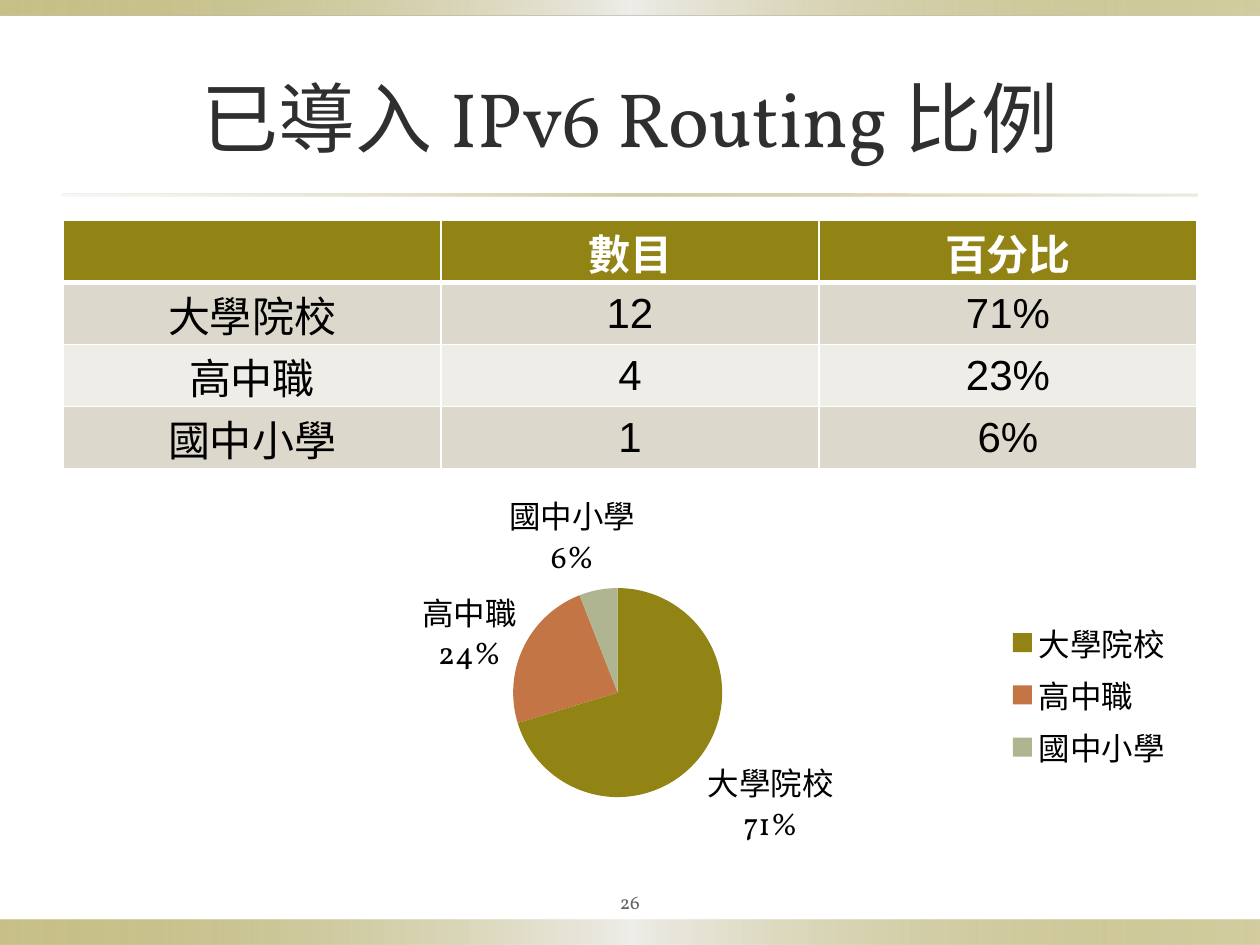
import copy

import lxml.etree
import pptx
import pptx.chart.data
import pptx.dml.color
import pptx.enum.chart
import pptx.enum.shapes
import pptx.enum.text
import pptx.oxml
import pptx.oxml.ns
import pptx.util

OLIVE, SAND, PALE = "918415", "DCD9CC", "EEEDE8"
RUST, SAGE = "C47546", "AFB591"
WHITE, BLACK, CHARCOAL, GRAY = "FFFFFF", "000000", "2F2F2F", "636363"
LEVELS = ["大學院校", "高中職", "國中小學"]
BAR_STOPS = [(0, OLIVE, 50), (50, PALE, 100), (100, OLIVE, 40)]
RULE_STOPS = [(0, SAND, 20), (50, OLIVE, 40), (100, SAND, 50)]


def color(value):
    return pptx.dml.color.RGBColor.from_string(value)


def drawing_xml(text):
    return pptx.oxml.parse_xml(text.replace(">", f' {pptx.oxml.ns.nsdecls("a")}>', 1))


def chart_tag(name):
    return pptx.oxml.ns.qn(f"c:{name}")


def chart_layout(**settings):
    layout = lxml.etree.Element(chart_tag("layout"))
    manual = lxml.etree.SubElement(layout, chart_tag("manualLayout"))
    for name, value in settings.items():
        lxml.etree.SubElement(manual, chart_tag(name), val=str(value))
    return layout


class SlideBuilder:
    """Places elements on a grid of 20 columns and 30 rows."""

    columns, rows = 20, 30
    heading_font, table_font = "Vollkorn", "Arial"

    def __init__(self, presentation):
        self.column = presentation.slide_width / self.columns
        self.row = presentation.slide_height / self.rows
        self.slide = presentation.slides.add_slide(presentation.slide_layouts[6])

    def box(self, left, top, width, height):
        return (round(left * self.column), round(top * self.row),
                round(width * self.column), round(height * self.row))

    def style(self, paragraph, font_name, size, font_color, bold=False):
        paragraph.alignment = pptx.enum.text.PP_ALIGN.CENTER
        font = paragraph.font
        font.name, font.size, font.bold = font_name, pptx.util.Pt(size), bold
        font.color.rgb = color(font_color)

    def gradient(self, place, stops):
        """Draw a band with (position, colour, opacity) stops in percent."""
        shape = self.slide.shapes.add_shape(
            pptx.enum.shapes.MSO_SHAPE.RECTANGLE, *self.box(*place))
        shape.shadow.inherit = False
        shape.line.fill.background()
        shape.fill.gradient()
        shape.fill.gradient_angle = 0
        stop_list = shape.element.find(".//" + pptx.oxml.ns.qn("a:gsLst"))
        stop_list.clear()
        for position, stop_color, opacity in stops:
            stop_list.append(drawing_xml(
                f'<a:gs pos="{position * 1000}"><a:srgbClr val="{stop_color}">'
                f'<a:alpha val="{opacity * 1000}"/></a:srgbClr></a:gs>'))

    def text(self, place, text, size, font_color, inset):
        frame = self.slide.shapes.add_textbox(*self.box(*place)).text_frame
        frame.word_wrap = True
        frame.vertical_anchor = pptx.enum.text.MSO_ANCHOR.MIDDLE
        frame.margin_left = frame.margin_right = pptx.util.Inches(inset)
        frame.margin_top = frame.margin_bottom = pptx.util.Inches(0.05)
        frame.text = text
        self.style(frame.paragraphs[0], self.heading_font, size, font_color)

    def borders(self, cell, top, bottom):
        """Give a cell white borders; the sides are one point wide."""
        properties = cell._tc.get_or_add_tcPr()
        for index, (side, width) in enumerate(
                [("L", 1), ("R", 1), ("T", top), ("B", bottom)]):
            properties.insert(index, drawing_xml(
                f'<a:ln{side} w="{pptx.util.Pt(width)}"><a:solidFill>'
                f'<a:srgbClr val="{WHITE}"/></a:solidFill></a:ln{side}>'))

    def table(self, place, records):
        table = self.slide.shapes.add_table(
            len(records), len(records[0]), *self.box(*place)).table
        for row, record in enumerate(records):
            header = row == 0
            for column, text in enumerate(record):
                cell = table.cell(row, column)
                cell.text = text
                cell.vertical_anchor = pptx.enum.text.MSO_ANCHOR.MIDDLE
                cell.margin_left = cell.margin_right = pptx.util.Inches(0.01)
                cell.margin_top, cell.margin_bottom = pptx.util.Inches(0.01), 0
                cell.fill.solid()
                cell.fill.fore_color.rgb = color(
                    OLIVE if header else SAND if row % 2 else PALE)
                self.borders(cell, 3 if row == 1 else 1, 3 if header else 1)
                self.style(cell.text_frame.paragraphs[0], self.table_font, 24,
                           WHITE if header else BLACK, bold=header)

    def pie(self, place, categories, values, colors, plot_area, label_shifts):
        """Draw a pie; plot_area and label_shifts are shares of the chart's size."""
        data = pptx.chart.data.CategoryChartData()
        data.categories = categories
        data.add_series("Series 1", values)
        chart = self.slide.shapes.add_chart(
            pptx.enum.chart.XL_CHART_TYPE.PIE, *self.box(*place), data).chart
        chart.has_title = False
        chart.font.name, chart.font.size = self.heading_font, pptx.util.Pt(18)
        chart.font.color.rgb = color(BLACK)
        chart.has_legend = True
        chart.legend.position = pptx.enum.chart.XL_LEGEND_POSITION.RIGHT
        chart.legend.include_in_layout = False
        plot = chart.plots[0]
        plot.vary_by_categories = True
        for index, point_color in enumerate(colors):
            fill = plot.series[0].points[index].format.fill
            fill.solid()
            fill.fore_color.rgb = color(point_color)
        self.pie_labels(plot.series[0].data_labels, label_shifts)
        area = chart.element.find(".//" + chart_tag("plotArea"))
        for old_layout in area.findall(chart_tag("layout")):
            area.remove(old_layout)
        area.insert(0, chart_layout(layoutTarget="inner", xMode="edge", yMode="edge",
                                    **dict(zip("xywh", plot_area))))

    def pie_labels(self, labels, shifts):
        """Label each slice outside, moving the slices named in shifts."""
        labels.show_category_name = labels.show_value = True
        labels.show_percentage = False
        labels.number_format, labels.number_format_is_linked = '0"%"', False
        labels.position = pptx.enum.chart.XL_LABEL_POSITION.OUTSIDE_END
        group = labels._element
        for leader_lines in group.findall(chart_tag("showLeaderLines")):
            leader_lines.set("val", "0")
        separator = lxml.etree.Element(chart_tag("separator"))
        separator.text = "\n"
        group.find(chart_tag("showBubbleSize")).addnext(separator)
        shared = [child for child in group
                  if child.tag != chart_tag("showLeaderLines")]
        for order, (index, (x, y)) in enumerate(shifts.items()):
            label = lxml.etree.Element(chart_tag("dLbl"))
            lxml.etree.SubElement(label, chart_tag("idx"), val=str(index))
            label.append(chart_layout(x=x, y=y))
            label.extend(copy.deepcopy(shared))
            group.insert(order, label)


def main():
    presentation = pptx.Presentation()
    presentation.slide_width = pptx.util.Inches(10)
    presentation.slide_height = pptx.util.Inches(7.5)
    builder = SlideBuilder(presentation)

    builder.gradient((0, 29.2, 20, 0.8), BAR_STOPS)
    builder.gradient((0, 0, 20, 0.48), BAR_STOPS)
    builder.gradient((1, 6.16, 18, 0.08), RULE_STOPS)
    builder.text((1, 1.2, 18, 5), "已導入 IPv6 Routing 比例", 44, CHARCOAL, 0.1)
    counts, shares = ["12", "4", "1"], ["71%", "23%", "6%"]
    builder.table((1, 7, 18, 7.88),
                  [("", "數目", "百分比"), *zip(LEVELS, counts, shares)])
    builder.text((9, 28, 2, 1.24), "26", 11, GRAY, 0.05)
    builder.pie((3.54, 15, 15.28, 14.12), LEVELS, (71, 24, 6),
                (OLIVE, RUST, SAGE), (0.3, 0.26, 0.22, 0.47),
                {1: (0, 0.08), 2: (0.04, 0)})
    presentation.save("out.pptx")


if __name__ == "__main__":
    main()
